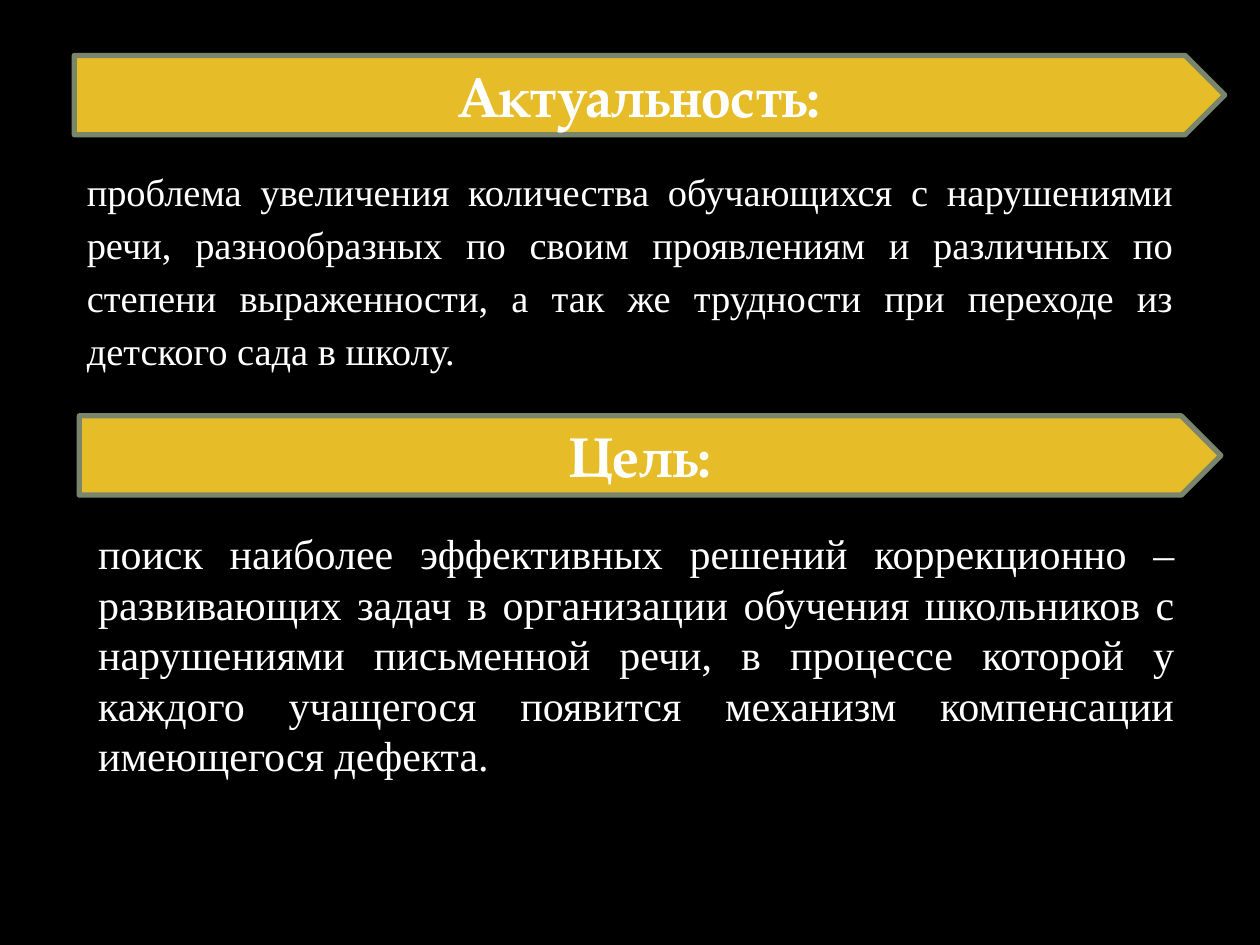
from pptx import Presentation
from pptx.dml.color import RGBColor
from pptx.enum.shapes import MSO_SHAPE as Shape
from pptx.enum.text import MSO_ANCHOR as Anchor, MSO_AUTO_SIZE as Fit, PP_ALIGN as Align
from pptx.util import Inches, Pt

BLACK = RGBColor(0x00, 0x00, 0x00)
WHITE = RGBColor(0xFF, 0xFF, 0xFF)
GOLD = RGBColor(0xE7, 0xBC, 0x29)
SAGE = RGBColor(0x7A, 0x86, 0x6C)

COLS, ROWS = 100, 75  # grid over the whole slide

RELEVANCE = (
    "проблема увеличения количества обучающихся с нарушениями речи, "
    "разнообразных по своим проявлениям и различных по степени выраженности, "
    "а так же трудности при переходе из детского сада в школу."
)
GOAL = (
    "поиск наиболее эффективных решений коррекционно – развивающих задач "
    "в организации обучения школьников с нарушениями письменной речи, "
    "в процессе которой у каждого учащегося появится механизм компенсации "
    "имеющегося дефекта."
)


def write(frame, text, font="Times New Roman", size=24, bold=False,
          align=Align.JUSTIFY, space=None):
    frame.word_wrap = True
    para = frame.paragraphs[0]
    para.alignment = align
    if space:
        para.line_spacing = space
    run = para.add_run()
    run.text = text
    run.font.name = font
    run.font.size = Pt(size)
    run.font.bold = bold
    run.font.color.rgb = WHITE


class Page:
    def __init__(self, deck):
        self.slide = deck.slides.add_slide(deck.slide_layouts[6])
        self.col = deck.slide_width / COLS
        self.row = deck.slide_height / ROWS
        back = self.slide.background.fill
        back.solid()
        back.fore_color.rgb = BLACK

    def area(self, left, top, width, height):
        return (round(left * self.col), round(top * self.row),
                round(width * self.col), round(height * self.row))

    def banner(self, text, left, top, width, height=6.3):
        plate = self.slide.shapes.add_shape(
            Shape.PENTAGON, *self.area(left, top, width, height))
        plate.shadow.inherit = False
        plate.fill.solid()
        plate.fill.fore_color.rgb = GOLD
        plate.line.color.rgb = SAGE
        plate.line.width = Pt(3)
        plate.text_frame.vertical_anchor = Anchor.MIDDLE
        write(plate.text_frame, text, font="TeX Gyre Pagella", size=32,
              bold=True, align=Align.CENTER)

    def body(self, text, left, top, width, height, **style):
        box = self.slide.shapes.add_textbox(*self.area(left, top, width, height))
        box.text_frame.auto_size = Fit.SHAPE_TO_FIT_TEXT
        write(box.text_frame, text, **style)


def main():
    deck = Presentation()
    deck.slide_width, deck.slide_height = Inches(10), Inches(7.5)
    page = Page(deck)

    # Relevance
    page.banner("Актуальность:", 5.9, 4.4, 91.3)
    page.body(RELEVANCE, 5.9, 12.3, 88.2, 18, size=22, space=1.15)

    # Goal
    page.banner("Цель:", 6.3, 33, 90.6)
    page.body(GOAL, 6.8, 41.4, 87.4, 21.2)

    deck.save("out.pptx")


if __name__ == "__main__":
    main()
